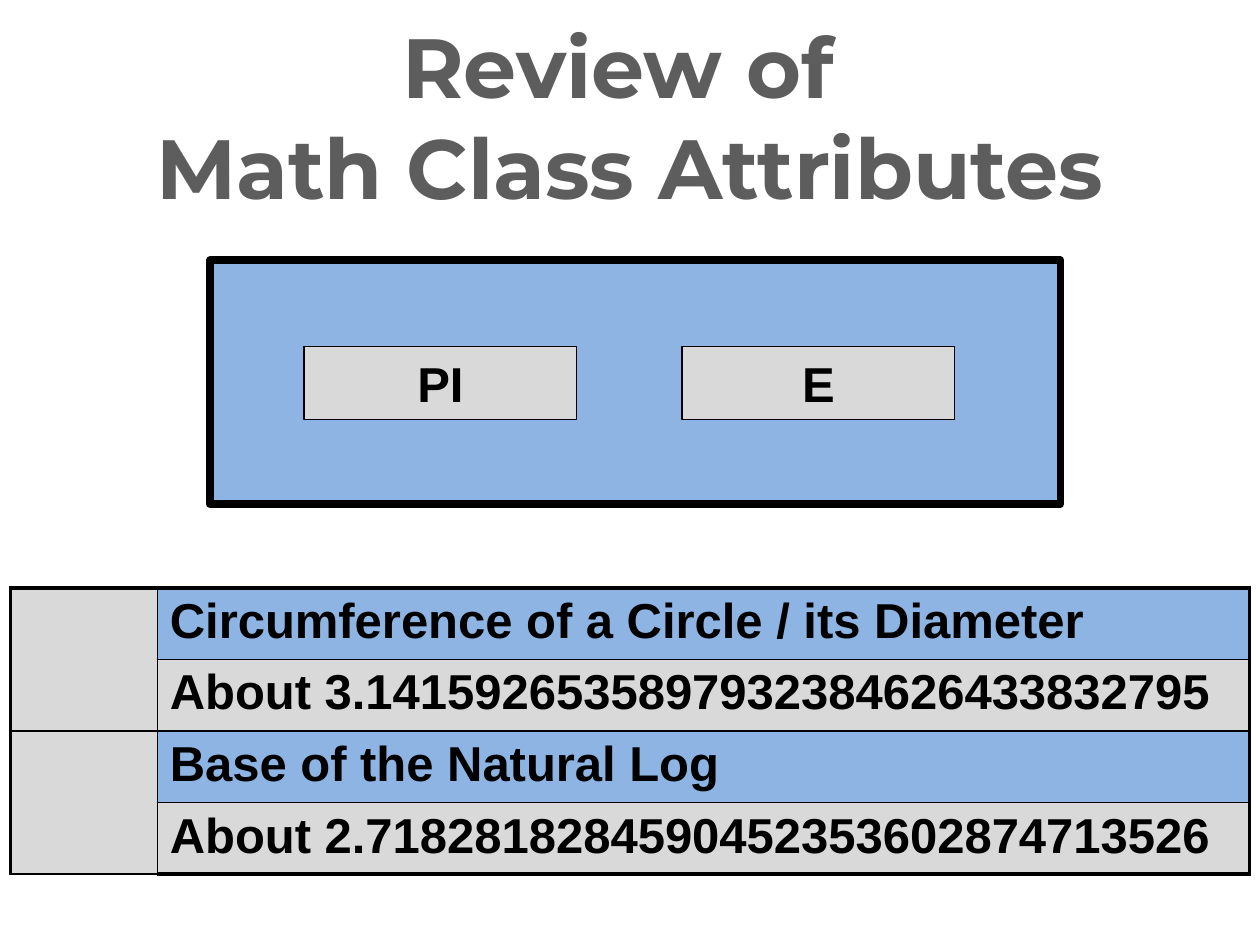
import pptx
import pptx.dml.color
import pptx.enum.shapes
import pptx.enum.text
import pptx.oxml
import pptx.oxml.ns
import pptx.util
from pptx.util import Cm

COLORS = {"title": "5D5D5D", "blue": "8EB4E3", "gray": "D9D9D9", "black": "000000"}
ALIGN = pptx.enum.text.PP_ALIGN
ANCHOR = pptx.enum.text.MSO_ANCHOR
THICK, THIN = 2.25, 1

ATTRIBUTES = [
    ("PI", "Circumference of a Circle / its Diameter", "About 3.1415926535897932384626433832795"),
    ("E", "Base of the Natural Log", "About 2.7182818284590452353602874713526"),
]


def rgb(name):
    return pptx.dml.color.RGBColor.from_string(COLORS[name])


def write_text(frame, text, size=28, font="Arial", color="black", align=ALIGN.LEFT):
    frame.word_wrap = True
    paragraph = frame.paragraphs[0]
    paragraph.text = text
    paragraph.alignment = align
    for run in paragraph.runs:
        run.font.name = font
        run.font.size = pptx.util.Pt(size)
        run.font.bold = True
        run.font.color.rgb = rgb(color)
    paragraph.font.size = pptx.util.Pt(size)
    paragraph.font.name = font


def add_title(slide, left, top, width, height):
    frame = slide.shapes.add_textbox(left, top, width, height).text_frame
    frame.vertical_anchor = ANCHOR.MIDDLE
    write_text(frame, "Review of \vMath Class Attributes", size=48, font="Montserrat",
               color="title", align=ALIGN.CENTER)


def add_rectangle(group, left, top, width, height, fill, line_width):
    shape = group.shapes.add_shape(
        pptx.enum.shapes.MSO_SHAPE.RECTANGLE, left, top, width, height)
    shape.shadow.inherit = False
    shape.fill.solid()
    shape.fill.fore_color.rgb = rgb(fill)
    shape.line.color.rgb = rgb("black")
    shape.line.width = pptx.util.Pt(line_width)
    return shape


def add_attribute_panel(slide, left, top, width, height):
    """Blue panel with one gray button per attribute."""
    group = slide.shapes.add_group_shape()
    add_rectangle(group, left, top, width, height, "blue", 4.5)
    for index, (name, _, _) in enumerate(ATTRIBUTES):
        button = add_rectangle(group, left + Cm(1.9) + index * Cm(7.62), top + Cm(1.73),
                               Cm(5.5), Cm(1.48), "gray", 0.75)
        button.text_frame.vertical_anchor = ANCHOR.MIDDLE
        write_text(button.text_frame, name, align=ALIGN.CENTER)


def format_cell(cell, fill, borders):
    """Fill the cell and draw its left, right, top and bottom borders."""
    cell.fill.solid()
    cell.fill.fore_color.rgb = rgb(fill)
    properties = cell._tc.get_or_add_tcPr()
    for index, (side, width) in enumerate(zip("LRTB", borders)):
        properties.insert(index, pptx.oxml.parse_xml(
            f'<a:ln{side} {pptx.oxml.ns.nsdecls("a")} w="{pptx.util.Pt(width)}">'
            f'<a:solidFill><a:srgbClr val="{COLORS["black"]}"/></a:solidFill></a:ln{side}>'))


def add_definition_table(slide, left, top, width, height):
    row_count = 2 * len(ATTRIBUTES)
    table = slide.shapes.add_table(row_count, 2, left, top, width, height).table
    table.first_row = table.horz_banding = False
    table.columns[0].width = Cm(2.96)
    table.columns[1].width = width - Cm(2.96)
    texts = [text for _, *pair in ATTRIBUTES for text in pair]
    for row, text in enumerate(texts):
        table.rows[row].height = height // row_count
        top_line = THICK if row == 0 else THIN
        bottom_line = THICK if row == row_count - 1 else THIN
        format_cell(table.cell(row, 0), "gray", (THICK, THIN, top_line, bottom_line))
        cell = table.cell(row, 1)
        format_cell(cell, ("blue", "gray")[row % 2], (THIN, THICK, top_line, bottom_line))
        write_text(cell.text_frame, text)
    for row in range(0, row_count, 2):
        table.cell(row, 0).merge(table.cell(row + 1, 0))


def main():
    presentation = pptx.Presentation()
    presentation.slide_width, presentation.slide_height = Cm(25.4), Cm(19.05)
    slide = presentation.slides.add_slide(presentation.slide_layouts[6])
    add_title(slide, 0, 0, Cm(25.4), Cm(4.65))
    add_attribute_panel(slide, Cm(4.23), Cm(5.25), Cm(17.15), Cm(4.91))
    add_definition_table(slide, Cm(0.21), Cm(11.85), Cm(24.98), Cm(5.77))
    presentation.save("out.pptx")


if __name__ == "__main__":
    main()
